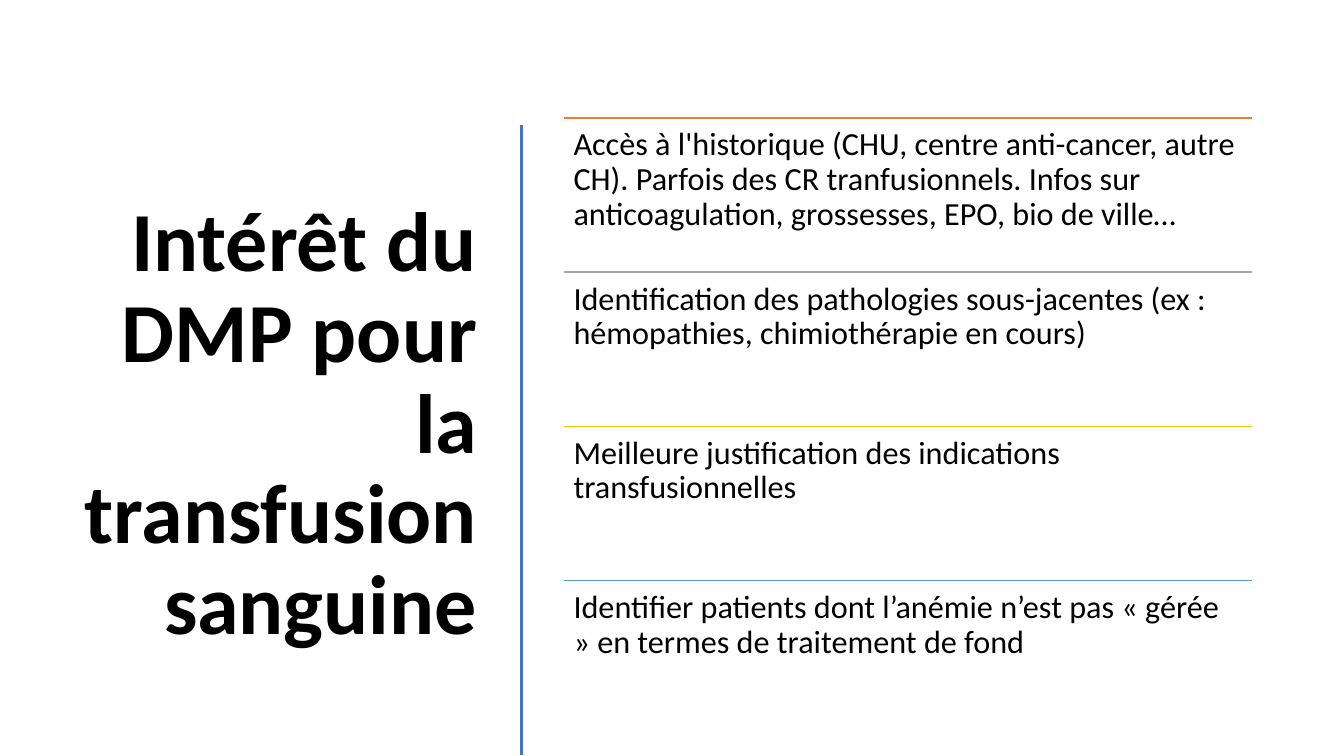
from dataclasses import dataclass

from pptx import Presentation
from pptx.dml.color import RGBColor
from pptx.enum.shapes import MSO_CONNECTOR
from pptx.enum.text import MSO_ANCHOR, PP_ALIGN
from pptx.oxml.ns import qn
from pptx.util import Pt
from lxml import etree

STRAIGHT = MSO_CONNECTOR.STRAIGHT
TOP, MIDDLE = MSO_ANCHOR.TOP, MSO_ANCHOR.MIDDLE
LEFT, RIGHT = PP_ALIGN.LEFT, PP_ALIGN.RIGHT
EMU_PER_PX = 9144
BLANK_LAYOUT = 6


@dataclass(frozen=True)
class Theme:
    font: str = "Calibri"
    text: str = "000000"
    divider: str = "4472C4"
    rules: tuple = ("ED7D31", "A5A5A5", "FFC000", "5B9BD5")
    title_size: int = 60
    body_size: int = 23
    divider_width: int = 2
    rule_width: int = 1


THEME = Theme()
TITLE = "Intérêt du DMP pour la transfusion sanguine"
BENEFITS = (
    "Accès à l'historique (CHU, centre anti-cancer, autre CH). Parfois des CR "
    "tranfusionnels. Infos sur anticoagulation, grossesses, EPO, bio de ville…",
    "Identification des pathologies sous-jacentes (ex : hémopathies, "
    "chimiothérapie en cours)",
    "Meilleure justification des indications transfusionnelles",
    "Identifier patients dont l’anémie n’est pas « gérée » en termes de "
    "traitement de fond",
)
LIST_LEFT, LIST_TOP, LIST_WIDTH, ROW_HEIGHT = 559, 117, 683, 153


def px(length):
    return length * EMU_PER_PX


def set_attributes(target, values):
    for name, value in values.items():
        setattr(target, name, value)


def add_line(slide, start, end, color, width):
    line = slide.shapes.add_connector(STRAIGHT, *map(px, start + end))
    line.line.color.rgb = RGBColor.from_string(color)
    line.line.width = Pt(width)
    etree.SubElement(line._element.spPr, qn("a:effectLst"))


def add_text(slide, box, text, size, bold=False, align=LEFT, anchor=TOP, inset=10):
    frame = slide.shapes.add_textbox(*map(px, box)).text_frame
    set_attributes(frame, {
        "word_wrap": True,
        "vertical_anchor": anchor,
        "margin_left": px(10),
        "margin_right": px(10),
        "margin_top": px(inset),
        "margin_bottom": px(inset),
    })
    paragraph = frame.paragraphs[0]
    set_attributes(paragraph, {"alignment": align, "line_spacing": 0.9})
    run = paragraph.add_run()
    run.text = text
    set_attributes(run.font, {"name": THEME.font, "size": Pt(size), "bold": bold})
    run.font.color.rgb = RGBColor.from_string(THEME.text)


def add_benefit(slide, top, text, color):
    right = LIST_LEFT + LIST_WIDTH
    add_line(slide, (LIST_LEFT, top), (right, top), color, THEME.rule_width)
    add_text(slide, (LIST_LEFT, top, LIST_WIDTH, ROW_HEIGHT), text, THEME.body_size)


def main():
    presentation = Presentation()
    set_attributes(presentation, {"slide_width": px(1333), "slide_height": px(750)})
    slide = presentation.slides.add_slide(presentation.slide_layouts[BLANK_LAYOUT])
    add_text(slide, (52, 117, 431, 611), TITLE, THEME.title_size,
             bold=True, align=RIGHT, anchor=MIDDLE, inset=5)
    add_line(slide, (517, 124), (517, 749), THEME.divider, THEME.divider_width)
    for row, (text, color) in enumerate(zip(BENEFITS, THEME.rules)):
        add_benefit(slide, LIST_TOP + row * ROW_HEIGHT, text, color)
    presentation.save("out.pptx")


if __name__ == "__main__":
    main()
